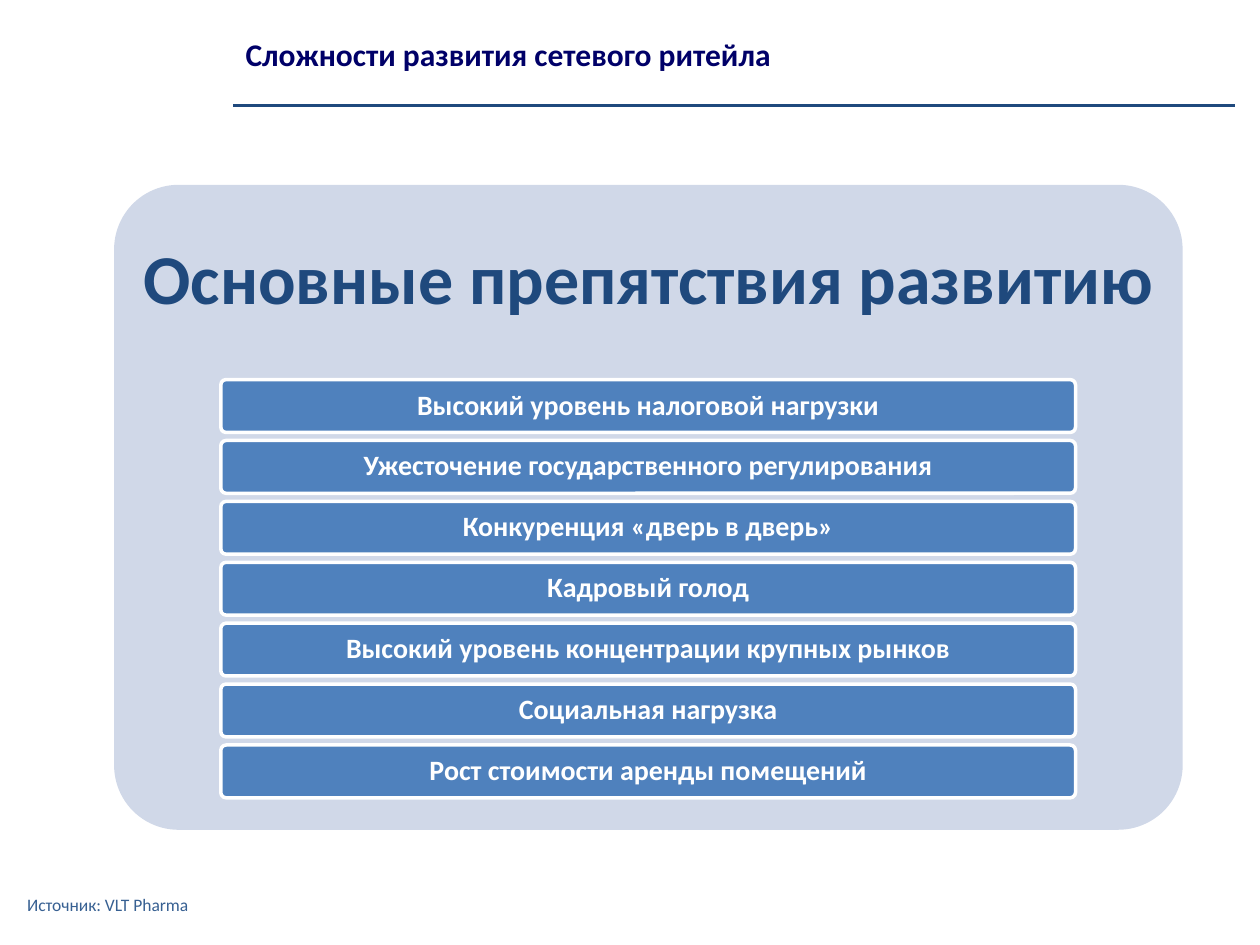
from lxml.etree import SubElement
from pptx import Presentation
from pptx.dml.color import RGBColor
from pptx.enum.shapes import MSO_CONNECTOR, MSO_SHAPE
from pptx.enum.text import MSO_ANCHOR, MSO_AUTO_SIZE, PP_ALIGN
from pptx.oxml.ns import qn
from pptx.util import Pt

NAVY = RGBColor(0x00, 0x00, 0x68)
DARK_BLUE = RGBColor(0x1F, 0x49, 0x7D)
SOURCE_BLUE = RGBColor(0x37, 0x60, 0x92)
BAR_BLUE = RGBColor(0x4F, 0x81, 0xBD)
PANEL_BLUE = RGBColor(0xD0, 0xD8, 0xE8)
WHITE = RGBColor(0xFF, 0xFF, 0xFF)

OBSTACLES = [
    "Высокий уровень налоговой нагрузки",
    "Ужесточение государственного регулирования",
    "Конкуренция «дверь в дверь»",
    "Кадровый голод",
    "Высокий уровень концентрации крупных рынков",
    "Социальная нагрузка",
    "Рост стоимости аренды помещений",
]
BAR_TOP = 216.9
BAR_PITCH = 34.8


def write_text(shape, text, size, color, bold=False, align=PP_ALIGN.LEFT,
               anchor=MSO_ANCHOR.MIDDLE, margins=(7.2, 3.6), line_spacing=1.0,
               font="Calibri"):
    """Fill a shape with one paragraph; margins are (horizontal, vertical)."""
    frame = shape.text_frame
    frame.word_wrap = True
    frame.vertical_anchor = anchor
    frame.margin_left = frame.margin_right = Pt(margins[0])
    frame.margin_top = frame.margin_bottom = Pt(margins[1])
    para = frame.paragraphs[0]
    para.alignment = align
    para.line_spacing = line_spacing
    span = para.add_run()
    span.text = text
    span.font.name = font
    span.font.size = Pt(size)
    span.font.bold = bold
    span.font.color.rgb = color


class PageBuilder:
    def __init__(self, page, corner=0.1):
        self.page = page
        self.corner = corner

    def text_box(self, left, top, width, height, text, **text_format):
        box = self.page.shapes.add_textbox(Pt(left), Pt(top), Pt(width), Pt(height))
        write_text(box, text, **text_format)
        return box

    def rounded_box(self, left, top, width, height, fill, line=None, line_width=2):
        box = self.page.shapes.add_shape(
            MSO_SHAPE.ROUNDED_RECTANGLE, Pt(left), Pt(top), Pt(width), Pt(height))
        box.adjustments[0] = self.corner
        box.shadow.inherit = False
        box.fill.solid()
        box.fill.fore_color.rgb = fill
        if line is None:
            box.line.fill.background()
        else:
            box.line.color.rgb = line
            box.line.width = Pt(line_width)
        return box

    def rule(self, left, right, top, color, width):
        rule = self.page.shapes.add_connector(
            MSO_CONNECTOR.STRAIGHT, Pt(left), Pt(top), Pt(right), Pt(top))
        rule.line.color.rgb = color
        rule.line.width = Pt(width)
        SubElement(rule._element.spPr, qn("a:effectLst"))


def main():
    deck = Presentation()
    deck.slide_width, deck.slide_height = Pt(720), Pt(540)
    builder = PageBuilder(deck.slides.add_slide(deck.slide_layouts[6]))

    builder.rule(133.2, 705.6, 60.3, DARK_BLUE, 1.5)
    title = builder.text_box(133.2, 16.7, 516, 29, "Сложности развития сетевого ритейла",
                             size=18, color=NAVY, bold=True, anchor=MSO_ANCHOR.TOP)
    title.text_frame.auto_size = MSO_AUTO_SIZE.SHAPE_TO_FIT_TEXT
    builder.text_box(8.4, 502.6, 228, 29, "Источник: VLT Pharma",
                     size=10, color=SOURCE_BLUE)

    builder.rounded_box(65.2, 105.6, 610.6, 368.6, PANEL_BLUE)
    builder.text_box(65.2, 105.6, 610.6, 110.6, "Основные препятствия развитию",
                     size=40, color=DARK_BLUE, bold=True, align=PP_ALIGN.CENTER,
                     margins=(12, 12), line_spacing=0.9)
    for index, obstacle in enumerate(OBSTACLES):
        bar = builder.rounded_box(126.2, BAR_TOP + index * BAR_PITCH, 488.4, 30.2,
                                  BAR_BLUE, line=WHITE)
        write_text(bar, obstacle, size=16, color=WHITE, bold=True,
                   align=PP_ALIGN.CENTER, margins=(3, 2), line_spacing=0.9)

    deck.save("out.pptx")


if __name__ == "__main__":
    main()
